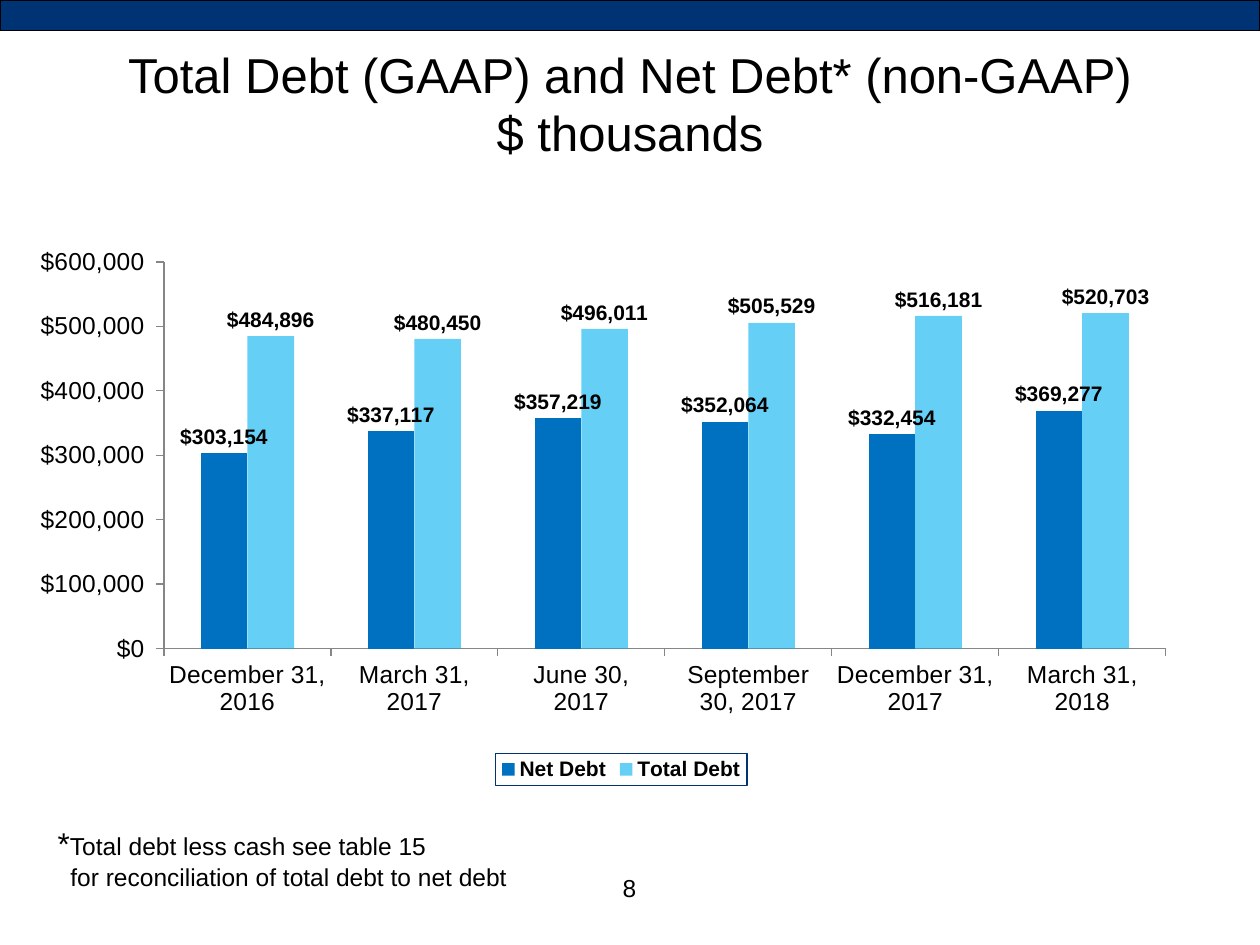
from lxml import etree
from pptx import Presentation
from pptx.chart.data import CategoryChartData
from pptx.dml.color import RGBColor
from pptx.enum.chart import XL_CHART_TYPE, XL_LABEL_POSITION, XL_LEGEND_POSITION, XL_TICK_MARK
from pptx.enum.shapes import MSO_SHAPE
from pptx.enum.text import MSO_ANCHOR, PP_ALIGN
from pptx.oxml import parse_xml
from pptx.oxml.ns import nsdecls, qn
from pptx.util import Inches, Pt

CLUSTERED = XL_CHART_TYPE.COLUMN_CLUSTERED
OUTSIDE_END = XL_LABEL_POSITION.OUTSIDE_END
BOTTOM = XL_LEGEND_POSITION.BOTTOM
TICK_OUT, TICK_NONE = XL_TICK_MARK.OUTSIDE, XL_TICK_MARK.NONE
RECTANGLE = MSO_SHAPE.RECTANGLE
TOP = MSO_ANCHOR.TOP
LEFT, CENTER = PP_ALIGN.LEFT, PP_ALIGN.CENTER

FONT = "Arial"
BLACK = RGBColor(0x00, 0x00, 0x00)
NAVY = RGBColor(0x00, 0x33, 0x73)
BLUE = RGBColor(0x00, 0x70, 0xC0)
SKY = RGBColor(0x00, 0xB0, 0xF0)
GRAY = RGBColor(0x86, 0x86, 0x86)

QUARTERS = ["December 31, 2016", "March 31, 2017", "June 30,\n2017",
            "September 30, 2017", "December 31, 2017", "March 31, 2018"]
DEBT = [  # name, colour, opacity in percent, values
    ("Net Debt", BLUE, 100, [303154, 337117, 357219, 352064, 332454, 369277]),
    ("Total Debt", SKY, 60, [484896, 480450, 496011, 505529, 516181, 520703]),
]
PLOT_AREA = {"x": 0.118, "y": 0.113, "w": 0.837, "h": 0.655}


def format_font(font, size, bold=False):
    font.name, font.size, font.bold = FONT, Pt(size), bold
    font.color.rgb = BLACK


def write_text(frame, *parts, align=LEFT, wrap=True, hanging=0):
    """Write (text, size) parts into one paragraph; newlines become line breaks."""
    frame.word_wrap = wrap
    frame.vertical_anchor = TOP
    paragraph = frame.paragraphs[0]
    paragraph.alignment = align
    if hanging:
        properties = paragraph._p.get_or_add_pPr()
        properties.set("marL", str(Inches(hanging)))
        properties.set("indent", str(-Inches(hanging)))
    for text, size in parts:
        for number, line in enumerate(text.split("\n")):
            if number:
                paragraph.add_line_break()
            run = paragraph.add_run()
            run.text = line
            format_font(run.font, size)


def place(part, box):
    part.left, part.top, part.width, part.height = map(Inches, box)


def add_banner(slide, box):
    banner = slide.shapes.add_shape(RECTANGLE, *map(Inches, box))
    banner.shadow.inherit = False
    banner.fill.solid()
    banner.fill.fore_color.rgb = NAVY
    banner.line.color.rgb = BLACK
    banner.line.width = Pt(0.75)


def add_title(slide, box):
    title = slide.shapes.title
    place(title, box)
    write_text(title.text_frame,
               ("Total Debt (GAAP) and Net Debt* (non-GAAP)\n$ thousands", 28),
               align=CENTER)


def add_text(slide, box, *parts, **layout):
    text_box = slide.shapes.add_textbox(*map(Inches, box))
    write_text(text_box.text_frame, *parts, **layout)


def format_axis(axis):
    format_font(axis.tick_labels.font, 14)
    axis.major_tick_mark, axis.minor_tick_mark = TICK_OUT, TICK_NONE
    axis.has_major_gridlines = False
    axis.format.line.color.rgb = GRAY
    axis.format.line.width = Pt(0.75)


def format_series(series, color, opacity):
    series.format.fill.solid()
    series.format.fill.fore_color.rgb = color
    series.invert_if_negative = False
    if opacity < 100:
        color_element = series._element.spPr.find(".//" + qn("a:srgbClr"))
        etree.SubElement(color_element, qn("a:alpha"), val=str(opacity * 1000))
    labels = series.data_labels
    labels.show_value = True
    labels.position = OUTSIDE_END
    labels.number_format, labels.number_format_is_linked = '"$"#,##0', False
    format_font(labels.font, 12, bold=True)


def set_plot_layout(chart):
    modes = "".join(f'<c:{side}Mode val="edge"/>' for side in "xy")
    sizes = "".join(f'<c:{key} val="{share}"/>' for key, share in PLOT_AREA.items())
    layout = parse_xml(f'<c:layout {nsdecls("c")}><c:manualLayout>'
                       f'<c:layoutTarget val="inner"/>{modes}{sizes}'
                       f'</c:manualLayout></c:layout>')
    plot_area = chart._chartSpace.chart.plotArea
    for automatic in plot_area.findall(qn("c:layout")):
        plot_area.remove(automatic)
    plot_area.insert(0, layout)


def add_legend(chart):
    chart.has_legend = True
    legend = chart.legend
    legend.position = BOTTOM
    legend.include_in_layout = False
    format_font(legend.font, 12, bold=True)
    border = parse_xml(f'<c:spPr {nsdecls("c", "a")}><a:ln w="{Pt(0.75)}"><a:solidFill>'
                       f'<a:srgbClr val="{NAVY}"/></a:solidFill></a:ln></c:spPr>')
    legend._element.find(qn("c:txPr")).addprevious(border)


def add_debt_chart(slide, box):
    data = CategoryChartData()
    data.categories = QUARTERS
    for name, _, _, values in DEBT:
        data.add_series(name, values)
    chart = slide.shapes.add_chart(CLUSTERED, *map(Inches, box), data).chart
    chart.has_title = False
    format_font(chart.font, 12, bold=True)

    # Columns and their labels
    plot = chart.plots[0]
    plot.gap_width, plot.overlap = 158, 0
    plot.vary_by_categories = False
    for series, (_, color, opacity, _) in zip(plot.series, DEBT):
        format_series(series, color, opacity)

    # Axes
    dollars = chart.value_axis
    for axis in (chart.category_axis, dollars):
        format_axis(axis)
    dollars.minimum_scale, dollars.maximum_scale = 0, 600000
    dollars.major_unit = 100000
    dollars.tick_labels.number_format = r'"$"#,##0_);[Red]\("$"#,##0\)'
    dollars.tick_labels.number_format_is_linked = False

    set_plot_layout(chart)
    add_legend(chart)


def main():
    deck = Presentation()
    deck.slide_width, deck.slide_height = Inches(10), Inches(7.5)
    slide = deck.slides.add_slide(deck.slide_layouts[5])
    add_banner(slide, (0, 0, 10, 0.24))
    add_title(slide, (0.5, 0.3, 9, 1.25))
    add_debt_chart(slide, (0.18, 1.55, 9.5, 4.69))
    # Page number and footnote
    add_text(slide, (4.84, 6.88, 0.31, 0.34), ("8", 14), align=CENTER, wrap=False)
    add_text(slide, (0.36, 6.49, 4.35, 0.64), ("*", 18),
             ("Total debt less cash see table 15\n"
              "for reconciliation of total debt to net debt", 14), hanging=0.1)
    deck.save("out.pptx")


if __name__ == "__main__":
    main()
